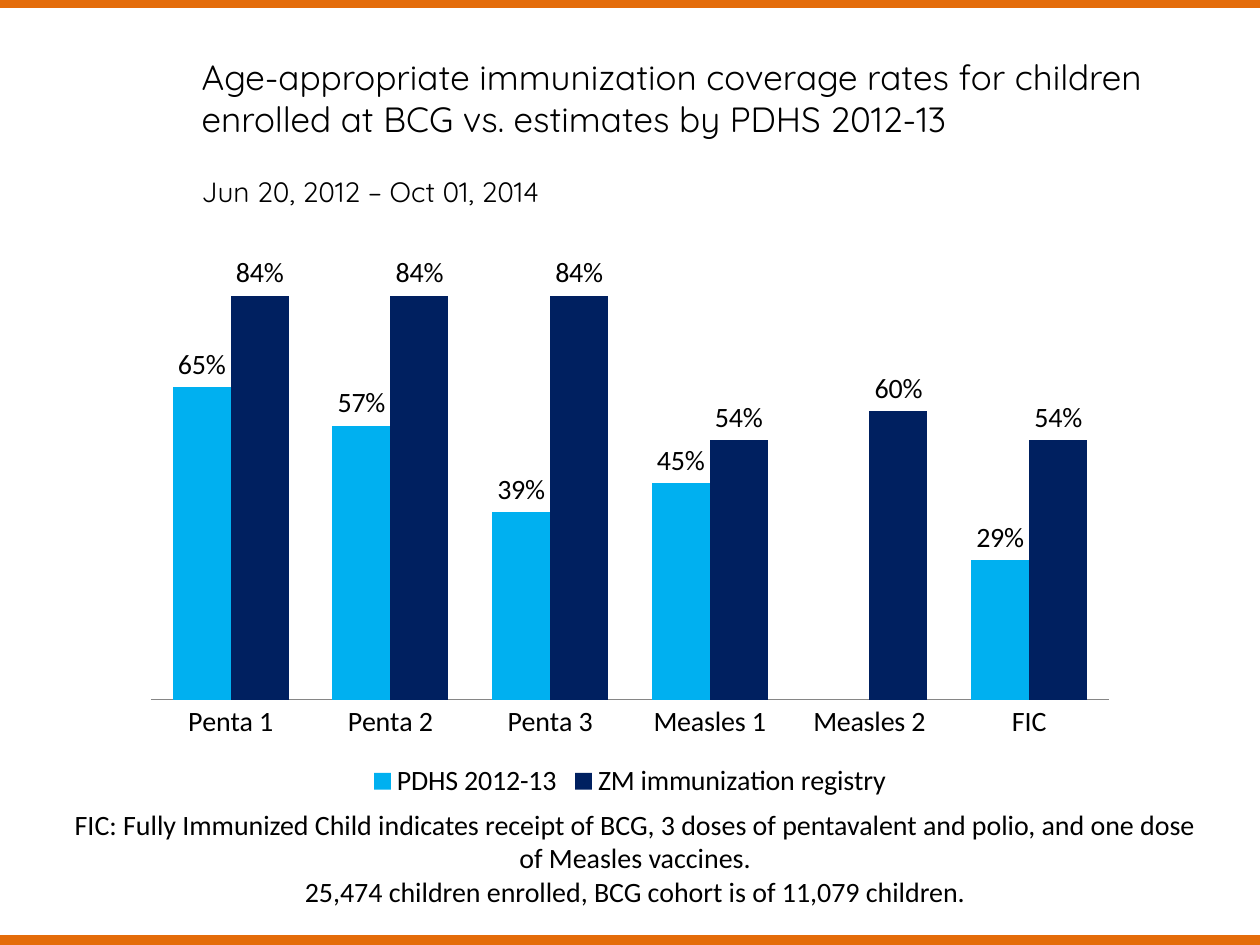
from lxml import etree
from pptx import Presentation
from pptx.chart.data import CategoryChartData
from pptx.dml.color import RGBColor
from pptx.enum.chart import (XL_CHART_TYPE, XL_LABEL_POSITION,
                             XL_LEGEND_POSITION, XL_TICK_MARK)
from pptx.enum.shapes import MSO_SHAPE
from pptx.enum.text import MSO_ANCHOR, PP_ALIGN
from pptx.oxml.ns import qn
from pptx.util import Cm, Pt

COLUMNS = XL_CHART_TYPE.COLUMN_CLUSTERED
OUTSIDE_END = XL_LABEL_POSITION.OUTSIDE_END
LEGEND_BOTTOM = XL_LEGEND_POSITION.BOTTOM
NO_TICKS = XL_TICK_MARK.NONE
RECTANGLE = MSO_SHAPE.RECTANGLE
MIDDLE = MSO_ANCHOR.MIDDLE
LEFT, CENTER = PP_ALIGN.LEFT, PP_ALIGN.CENTER

SLIDE_WIDTH, SLIDE_HEIGHT = 25.4, 19.05
BLACK, ORANGE, AXIS_GRAY = "000000", "E46C0A", "868686"
HEADING_FONT, BODY_FONT = "Quicksand", "Calibri"

HEADING = ("Age-appropriate immunization coverage rates for children "
           "enrolled at BCG vs. estimates by PDHS 2012-13")
PERIOD = "Jun 20, 2012 – Oct 01, 2014"
FOOTNOTES = [
    "FIC: Fully Immunized Child indicates receipt of BCG, 3 doses of "
    "pentavalent and polio, and one dose of Measles vaccines.",
    "25,474 children enrolled, BCG cohort is of 11,079 children.",
]
VACCINES = ["Penta 1", "Penta 2", "Penta 3", "Measles 1", "Measles 2", "FIC"]
COVERAGE = [
    ("PDHS 2012-13", "00B0F0", [0.65, 0.57, 0.39, 0.45, None, 0.29]),
    ("ZM immunization registry", "002060",
     [0.84, 0.84, 0.84, 0.54, 0.6, 0.54]),
]


def rgb(value):
    return RGBColor.from_string(value)


def set_font(font, name, size):
    font.name = name
    font.size = Pt(size)
    font.color.rgb = rgb(BLACK)


def fill_paragraphs(frame, lines, font_name, alignment):
    """Write (text, size, space before) lines into a text frame."""
    for index, (text, size, space_before) in enumerate(lines):
        paragraph = frame.add_paragraph() if index else frame.paragraphs[0]
        paragraph.text = text
        paragraph.alignment = alignment
        if space_before:
            paragraph.space_before = Pt(space_before)
        set_font(paragraph.font, font_name, size)


def place_title(slide):
    title = slide.shapes.title
    title.left, title.top = Cm(3.81), Cm(1.07)
    title.width, title.height = Cm(21.29), Cm(3.18)
    title.text_frame.vertical_anchor = MIDDLE
    fill_paragraphs(title.text_frame, [(HEADING, 20, 0), (PERIOD, 16, 20)],
                    HEADING_FONT, LEFT)


def set_plot_layout(chart, **fractions):
    """Fix the inner plot area as fractions of the chart's size."""
    plot_area = chart.plots[0]._element.getparent()
    for old_layout in plot_area.findall(qn("c:layout")):
        plot_area.remove(old_layout)
    layout = etree.Element(qn("c:layout"))
    manual = etree.SubElement(layout, qn("c:manualLayout"))
    settings = {"layoutTarget": "inner", "xMode": "edge", "yMode": "edge",
                **fractions}
    for tag, value in settings.items():
        etree.SubElement(manual, qn(f"c:{tag}")).set("val", str(value))
    plot_area.insert(0, layout)


def add_coverage_chart(slide):
    data = CategoryChartData(number_format="0%")
    data.categories = VACCINES
    for name, _, rates in COVERAGE:
        data.add_series(name, rates)
    chart = slide.shapes.add_chart(COLUMNS, Cm(2.64), Cm(5.16), Cm(20.12),
                                   Cm(11.05), data).chart
    set_font(chart.font, BODY_FONT, 16)
    chart.has_title = False
    chart.has_legend = True
    chart.legend.position = LEGEND_BOTTOM
    chart.legend.include_in_layout = False

    rate_axis = chart.value_axis
    rate_axis.visible = False
    rate_axis.has_major_gridlines = False
    rate_axis.minimum_scale, rate_axis.maximum_scale = 0, 0.9
    vaccine_axis = chart.category_axis
    vaccine_axis.major_tick_mark = NO_TICKS
    vaccine_axis.format.line.color.rgb = rgb(AXIS_GRAY)

    plot = chart.plots[0]
    plot.gap_width, plot.overlap = 75, 0
    plot.vary_by_categories = False
    for series, (_, color, _) in zip(plot.series, COVERAGE):
        series.format.fill.solid()
        series.format.fill.fore_color.rgb = rgb(color)
        labels = series.data_labels
        labels.show_value = True
        labels.number_format = "0%"
        labels.number_format_is_linked = False
        labels.position = OUTSIDE_END
        set_font(labels.font, BODY_FONT, 16)
    set_plot_layout(chart, x=0.02, y=0.02, w=0.96, h=0.79)


def add_footnotes(slide):
    box = slide.shapes.add_textbox(Cm(1.07), Cm(16.15), Cm(23.47), Cm(2.31))
    box.text_frame.word_wrap = True
    fill_paragraphs(box.text_frame, [(note, 16, 0) for note in FOOTNOTES],
                    BODY_FONT, CENTER)


def add_edge_band(slide, top, height):
    band = slide.shapes.add_shape(RECTANGLE, 0, Cm(top), Cm(SLIDE_WIDTH),
                                  Cm(height))
    band.shadow.inherit = False
    band.fill.solid()
    band.fill.fore_color.rgb = rgb(ORANGE)
    band.line.fill.background()


def main():
    presentation = Presentation()
    presentation.slide_width = Cm(SLIDE_WIDTH)
    presentation.slide_height = Cm(SLIDE_HEIGHT)
    slide = presentation.slides.add_slide(presentation.slide_layouts[5])
    place_title(slide)
    add_coverage_chart(slide)
    add_footnotes(slide)
    add_edge_band(slide, SLIDE_HEIGHT - 0.2, 0.2)
    add_edge_band(slide, 0, 0.16)
    presentation.save("out.pptx")


if __name__ == "__main__":
    main()
